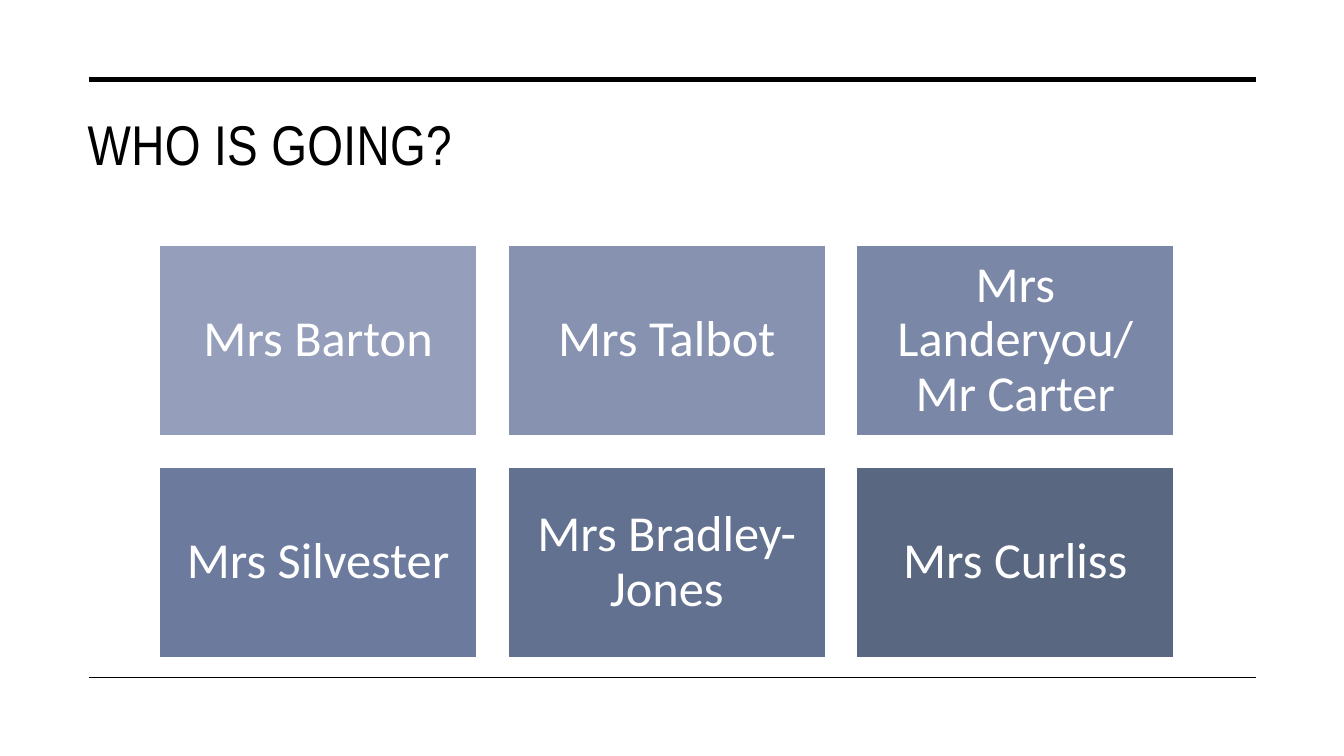
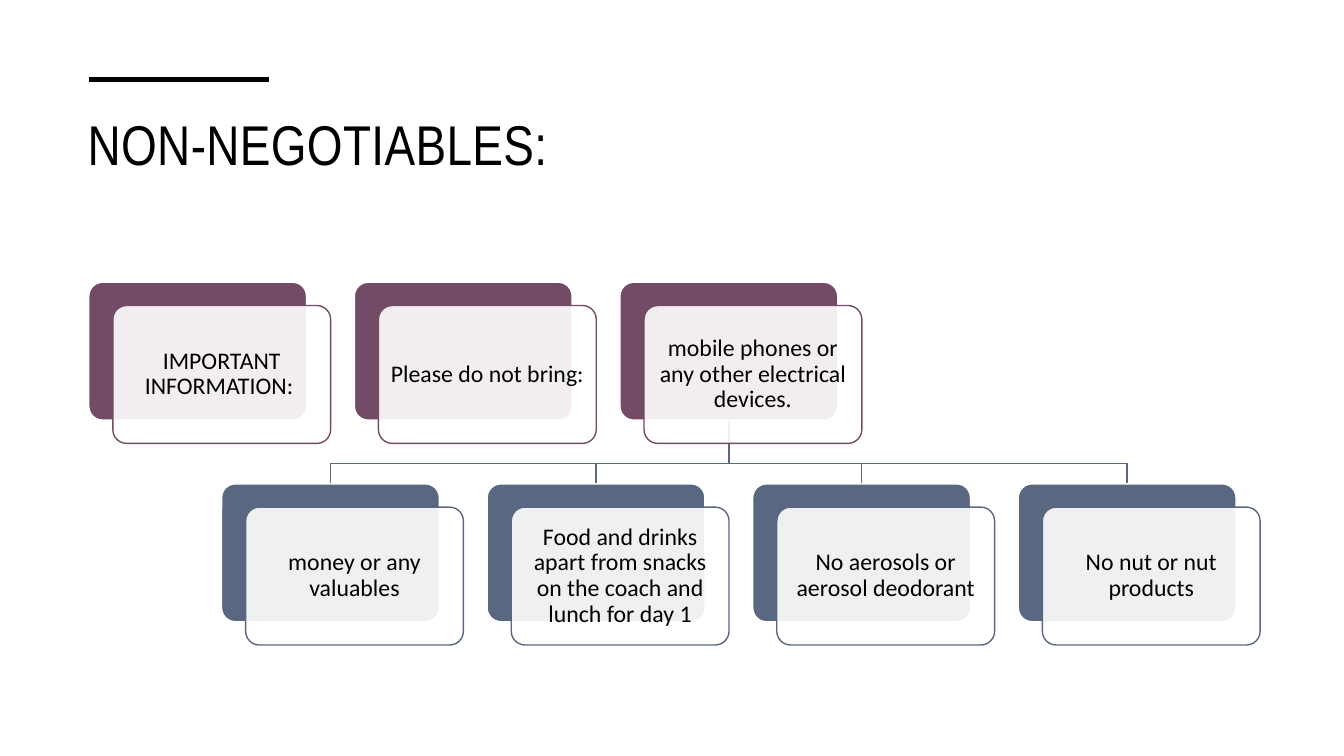
from dataclasses import dataclass
from pptx import Presentation
from pptx.dml.color import RGBColor
from pptx.enum.shapes import MSO_CONNECTOR, MSO_SHAPE
from pptx.enum.text import MSO_ANCHOR, PP_ALIGN
from pptx.oxml.ns import qn
from pptx.util import Pt
from lxml.etree import SubElement


@dataclass(frozen=True)
class Theme:
    ink: str = "000000"
    paper: str = "FFFFFF"
    plum: str = "734B67"
    slate: str = "596781"
    tiles: tuple = ("959EBB", "8792B1", "7A87A7", "6C7B9D", "627190", "596781")
    title_font: str = "Arial Narrow"
    body_font: str = "Calibri"
    title_size: int = 40
    tile_size: int = 36
    card_size: int = 17


theme = Theme()


def add_box(s, kind, x, y, w, h, fill, line):
    sp = s.shapes.add_shape(kind, Pt(x), Pt(y), Pt(w), Pt(h))
    sp.shadow.inherit = False
    sp.fill.solid()
    sp.fill.fore_color.rgb = RGBColor.from_string(fill)
    sp.line.color.rgb = RGBColor.from_string(line)
    sp.line.width = Pt(1)
    if kind == MSO_SHAPE.ROUNDED_RECTANGLE:
        sp.adjustments[0] = 0.1
    return sp


def write(sp, text, font, size, color, margins, anchor, align, spacing):
    tf = sp.text_frame
    frame = {"word_wrap": True, "vertical_anchor": anchor}
    frame.update(zip(("margin_left", "margin_top", "margin_right", "margin_bottom"),
                     map(Pt, margins)))
    for name, value in frame.items():
        setattr(tf, name, value)
    p = tf.paragraphs[0]
    for name, value in {"alignment": align, "line_spacing": spacing}.items():
        setattr(p, name, value)
    r = p.add_run()
    r.text = text
    for name, value in {"name": font, "size": Pt(size)}.items():
        setattr(r.font, name, value)
    r.font.color.rgb = RGBColor.from_string(color)
    return r


prs = Presentation()
prs.slide_width, prs.slide_height = Pt(960), Pt(540)

left, right, top_rule = 63.4, 897, 57
pages = [
    ("WHO IS GOING?", [(right, top_rule, 3.5), (right, 484, 1)]),
    ("NON-NEGOTIABLES:", [(192.4, top_rule, 3.5)]),
]
slides = []
for title, rules in pages:
    s = prs.slides.add_slide(prs.slide_layouts[6])
    slides.append(s)
    sp = s.shapes.add_textbox(Pt(55.6), Pt(75), Pt(842), Pt(86))
    r = write(sp, title, theme.title_font, theme.title_size, theme.ink,
              (7.2, 3.6, 7.2, 3.6), MSO_ANCHOR.TOP, PP_ALIGN.LEFT, 1.0)
    r.font._element.set("spc", "30")
    for end, y, weight in rules:
        rule = s.shapes.add_connector(MSO_CONNECTOR.STRAIGHT, Pt(left), Pt(y), Pt(end), Pt(y))
        rule.line.color.rgb = RGBColor.from_string(theme.ink)
        rule.line.width = Pt(weight)
        SubElement(rule._element.spPr, qn("a:effectLst"))

staff_slide, rules_slide = slides

staff = ["Mrs Barton", "Mrs Talbot", "Mrs Landeryou/ Mr Carter",
         "Mrs Silvester", "Mrs Bradley-Jones", "Mrs Curliss"]
for i, (name, color) in enumerate(zip(staff, theme.tiles)):
    row, col = divmod(i, 3)
    sp = add_box(staff_slide, MSO_SHAPE.RECTANGLE, 114 + col * 249, 175.2 + row * 158.6,
                 226.6, 136, color, theme.paper)
    write(sp, name, theme.body_font, theme.tile_size, theme.paper, (10.8,) * 4,
          MSO_ANCHOR.MIDDLE, PP_ALIGN.CENTER, 0.9)

card_w, card_h, pitch = 155.6, 98.5, 189.7
shift_x, shift_y = 17.2, 16.6
parent_y, child_y, bend_y = 201.6, 345.6, 331.2
child_left = left + pitch / 2
card_rows = [
    (left, parent_y, theme.plum,
     ["IMPORTANT INFORMATION: ", "Please do not bring:",
      "mobile phones or any other electrical devices."]),
    (child_left, child_y, theme.slate,
     ["money or any valuables",
      "Food and drinks apart from snacks on the coach and lunch for day 1",
      "No aerosols or aerosol deodorant", "No nut or nut products"]),
]

parent_x = left + 2 * pitch + card_w / 2
for i in range(len(card_rows[1][3])):
    child_x = child_left + i * pitch + card_w / 2
    branch = rules_slide.shapes.build_freeform(Pt(parent_x), Pt(parent_y + card_h))
    branch.add_line_segments([(Pt(parent_x), Pt(bend_y)), (Pt(child_x), Pt(bend_y)),
                              (Pt(child_x), Pt(child_y))], close=False)
    sp = branch.convert_to_shape()
    sp.shadow.inherit = False
    sp.fill.background()
    sp.line.color.rgb = RGBColor.from_string(theme.slate)
    sp.line.width = Pt(1)

for row_left, y, color, texts in card_rows:
    for i, text in enumerate(texts):
        x = row_left + i * pitch
        add_box(rules_slide, MSO_SHAPE.ROUNDED_RECTANGLE, x, y, card_w, card_h,
                color, theme.paper)
        sp = add_box(rules_slide, MSO_SHAPE.ROUNDED_RECTANGLE, x + shift_x, y + shift_y,
                     card_w, card_h, theme.paper, color)
        fill = sp._element.spPr.find(qn("a:solidFill"))
        SubElement(fill[0], qn("a:alpha"), val="90000")
        write(sp, text, theme.body_font, theme.card_size, theme.ink, (5,) * 4,
              MSO_ANCHOR.MIDDLE, PP_ALIGN.CENTER, 0.9)

prs.save("out.pptx")
